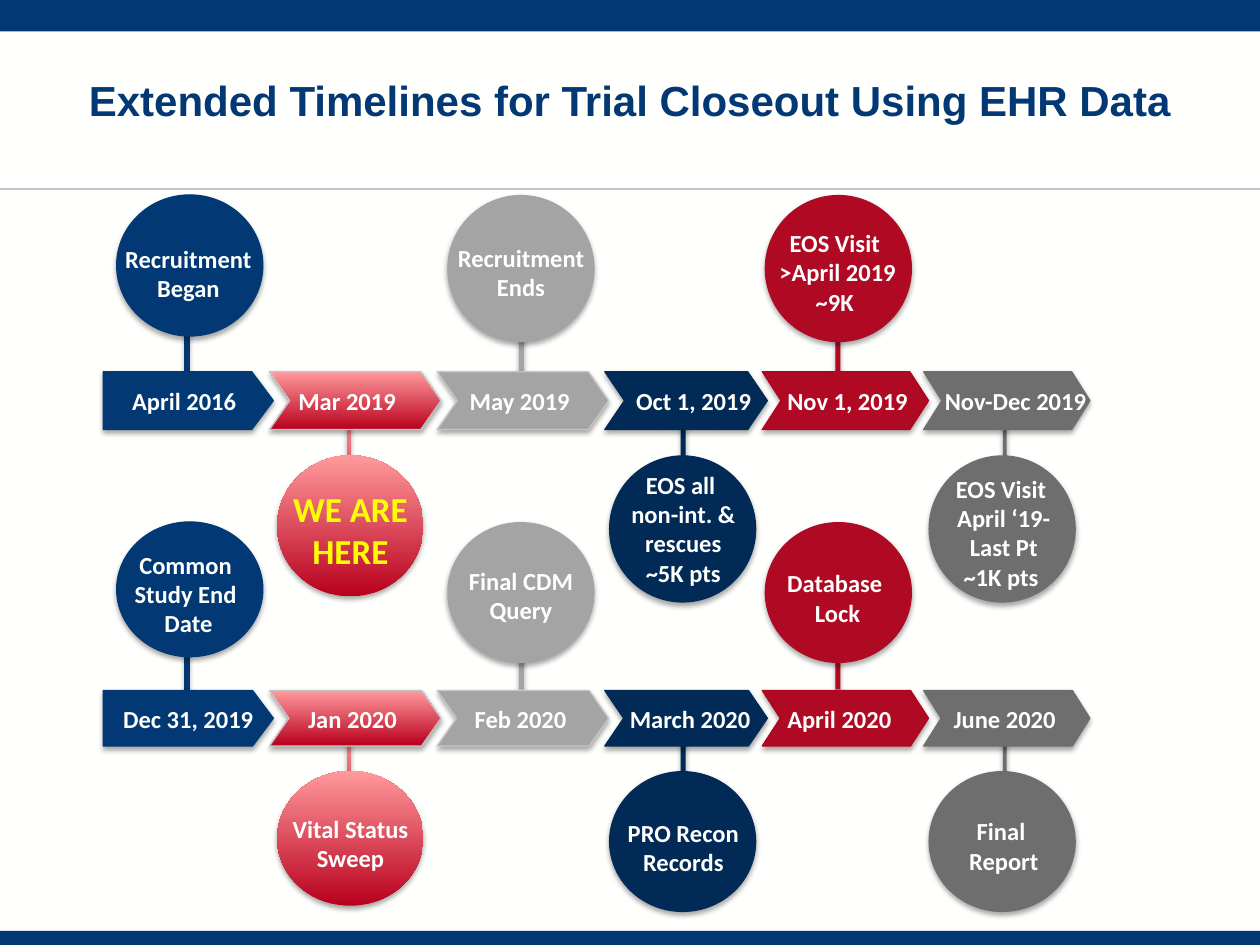
from collections import namedtuple

from lxml.etree import SubElement
from pptx import Presentation
from pptx.dml.color import RGBColor
from pptx.enum.shapes import MSO_CONNECTOR, MSO_SHAPE as SHAPE
from pptx.enum.text import MSO_ANCHOR, MSO_AUTO_SIZE, PP_ALIGN
from pptx.oxml.ns import qn
from pptx.util import Pt

BLUE = RGBColor(0x02, 0x38, 0x73)
NAVY = RGBColor(0x02, 0x2A, 0x56)
RED = RGBColor(0xAF, 0x09, 0x23)
RED_EDGE = RGBColor(0xAF, 0x05, 0x1F)
DEEP_RED = RGBColor(0xB8, 0x00, 0x1D)
PINK = RGBColor(0xFF, 0x99, 0x9C)
SILVER = RGBColor(0xA4, 0xA4, 0xA4)
PALE = RGBColor(0xC5, 0xC5, 0xC5)
GREY = RGBColor(0x6E, 0x6E, 0x6E)
WHITE = RGBColor(0xFF, 0xFF, 0xFE)
YELLOW = RGBColor(0xFE, 0xFE, 0x00)
GRADIENT = (DEEP_RED, PINK)

Column = namedtuple("Column", "x w adj fill edge up stem_x stem_y stem_w stem_extra "
                              "circle_x circle_w trim label_dx label_w")
Row = namedtuple("Row", "arrow_h circle_h up_y down_y stem_h")
Step = namedtuple("Step", "date date_dx date_w label label_dy lines size color",
                  defaults=(2, 14, WHITE))

COLUMNS = [
    Column(0, 97.2, 0.374, BLUE, BLUE, True, 46.8, -58, 2.2, 0, 7.7, 83.5, 3.6, -6, 94),
    Column(95, 98, 0.349, GRADIENT, PALE, False, 139.2, 20, 2.2, 13, 99.4, 83.5, 3.6, -3.6, 91),
    Column(190.8, 98, 0.349, SILVER, PALE, True, 237.6, -69, 2.9, 0, 196.6, 84.2, 0, -2.9, 90),
    Column(286.6, 92.9, 0.34, NAVY, NAVY, False, 330, 20, 2.9, 0, 289, 84.2, 0, -10, 105),
    Column(376.6, 95, 0.324, RED, RED_EDGE, True, 418.4, -69, 2.9, 0, 378, 84.2, 0, -10.4, 104),
    Column(468.8, 95, 0.315, GREY, GREY, False, 514.1, 19, 2.2, 0, 471.6, 84.2, 0, -2, 90),
]
ROW_2019 = Row(33.1, 84.2, -101, 47.8, 71.3)
ROW_2020 = Row(31.7, 80.6, -96.3, 46, 68.4)
STEPS_2019 = [
    Step("April 2016", 9.4, 79, "Recruitment Began", 24.5),
    Step("Mar 2019", 9.4, 72, "WE ARE HERE", 15, 2, 20, YELLOW),
    Step("May 2019", 11.5, 72, "Recruitment Ends", 23.8),
    Step("Oct 1, 2019", 10.8, 80.6, "EOS all \nnon-int. & rescues\n~5K pts", 4.6, 4),
    Step("Nov 1, 2019", 7.2, 84.2, "EOS Visit \v>April 2019\n~9K ", 15.3, 3),
    Step("Nov-Dec 2019", 5, 96.5, "EOS Visit \nApril ‘19-\nLast Pt\n~1K pts ", 6.9, 4),
]
STEPS_2020 = [
    Step("Dec 31, 2019", 4.3, 90, "Common \nStudy End \nDate", 12.2, 3),
    Step("Jan 2020", 15, 65.5, "Vital Status Sweep", 20.9),
    Step("Feb 2020", 14.4, 67, "Final CDM Query", 21.6),
    Step("March 2020", 7.2, 84.2, "PRO Recon Records", 23),
    Step("April 2020", 7.2, 75, "Database \nLock", 22.8),
    Step("June 2020", 10, 73.4, "Final \nReport", 22.3),
]


def effect_list(shape):
    return SubElement(shape._element.spPr, qn("a:effectLst"))


def add_shadow(shape):
    shadow = SubElement(effect_list(shape), qn("a:outerShdw"), blurRad=str(Pt(3.1)),
                        dist=str(Pt(1.8)), dir="5400000", rotWithShape="0")
    color = SubElement(shadow, qn("a:srgbClr"), val="000000")
    SubElement(color, qn("a:alpha"), val="35000")


def add_shape(s, kind, x, y, w, h, fill, edge=None, shadow=True):
    sp = s.shapes.add_shape(kind, Pt(x), Pt(y), Pt(w), Pt(h))
    if fill == GRADIENT:
        sp.fill.gradient()
        sp.fill.gradient_angle = 90
        for stop, color in zip(sp.fill.gradient_stops, GRADIENT):
            stop.color.rgb = color
    else:
        sp.fill.solid()
        sp.fill.fore_color.rgb = fill
    if edge is None:
        sp.line.fill.background()
    else:
        sp.line.color.rgb = edge
        sp.line.width = Pt(0.75)
    if shadow:
        add_shadow(sp)
    else:
        sp.shadow.inherit = False
    return sp


def add_text(s, text, x, y, w, h, size, color, font="Calibri", align=PP_ALIGN.CENTER, wrap=True):
    tf = s.shapes.add_textbox(Pt(x), Pt(y), Pt(w), Pt(h)).text_frame
    tf.word_wrap = wrap
    tf.auto_size = MSO_AUTO_SIZE.SHAPE_TO_FIT_TEXT
    tf.text = text
    for p in tf.paragraphs:
        p.alignment = align
        for r in p.runs:
            r.font.name = font
            r.font.size = Pt(size)
            r.font.bold = True
            r.font.color.rgb = color
    return tf


def add_frame(s, w, h):
    s.background.fill.solid()
    s.background.fill.fore_color.rgb = WHITE
    rule = s.shapes.add_connector(MSO_CONNECTOR.STRAIGHT, 0, Pt(108), Pt(w), Pt(108))
    rule.line.color.rgb = PALE
    rule.line.width = Pt(0.75)
    effect_list(rule)
    add_shape(s, SHAPE.RECTANGLE, 0, 0, w, 18, BLUE, shadow=False)
    add_shape(s, SHAPE.RECTANGLE, 0, h - 8, w, 9, BLUE, shadow=False)


def add_title(s, x, y, w, h):
    tf = add_text(s, "Extended Timelines for Trial Closeout Using EHR Data",
                  x, y, w, h, 24, BLUE, "Arial")
    tf.auto_size = MSO_AUTO_SIZE.NONE
    tf.vertical_anchor = MSO_ANCHOR.BOTTOM
    tf.margin_left = tf.margin_right = tf.margin_top = tf.margin_bottom = 0
    tf.paragraphs[0].line_spacing = 0.9


def add_timeline(s, x, y, row, steps):
    for i, (col, step) in enumerate(zip(COLUMNS, steps)):
        edge = BLUE if i == 0 else None
        add_shape(s, SHAPE.RECTANGLE, x + col.stem_x, y + col.stem_y, col.stem_w,
                  row.stem_h + col.stem_extra, col.fill, edge)
        kind = SHAPE.PENTAGON if i == 0 else SHAPE.CHEVRON
        arrow = add_shape(s, kind, x + col.x, y, col.w, row.arrow_h, col.fill, col.edge)
        arrow.adjustments[0] = col.adj
        left = x + col.circle_x
        top = y + (row.up_y if col.up else row.down_y)
        add_shape(s, SHAPE.OVAL, left, top, col.circle_w, row.circle_h - col.trim, col.fill, edge)
        add_text(s, step.label, left + col.label_dx, top + step.label_dy, col.label_w,
                 step.lines * step.size * 1.22 + 7.2, step.size, step.color)
        add_text(s, step.date, x + col.x + step.date_dx, y + 4.4, step.date_w, 24.3,
                 14, WHITE, align=PP_ALIGN.LEFT, wrap=False)


def main():
    prs = Presentation()
    prs.slide_width, prs.slide_height = Pt(720), Pt(540)
    s = prs.slides.add_slide(prs.slide_layouts[6])
    add_frame(s, 720, 540)
    add_title(s, 0, -24, 720, 96)
    add_timeline(s, 59, 394.6, ROW_2020, STEPS_2020)
    add_timeline(s, 59, 212.4, ROW_2019, STEPS_2019)
    prs.save("out.pptx")


if __name__ == "__main__":
    main()
